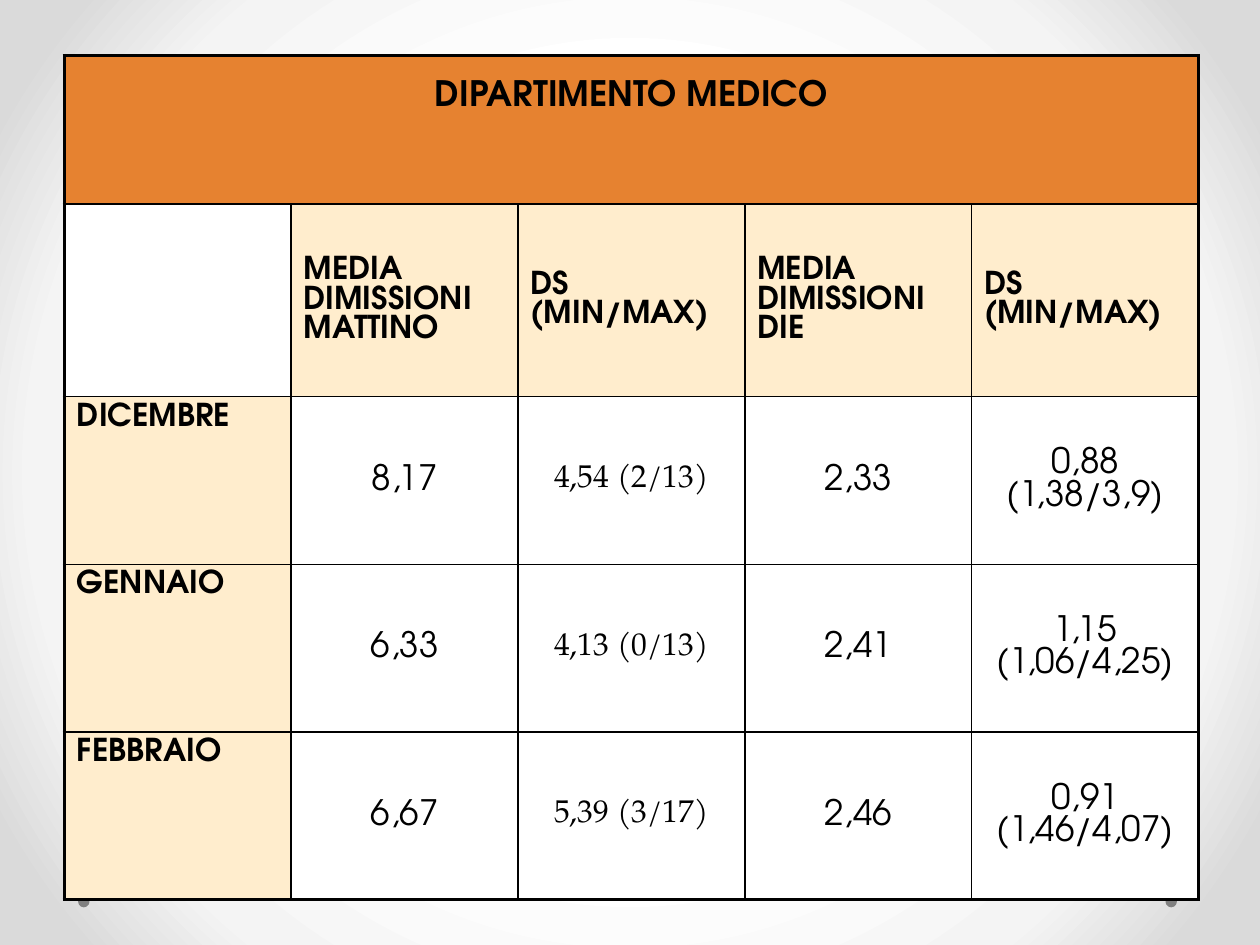
"""Build the slide with the discharge table of the medical department."""
import pptx
import pptx.dml.color
import pptx.enum.shapes
import pptx.enum.text
import pptx.oxml
import pptx.oxml.ns
import pptx.util
from pptx.util import Pt

BLACK = pptx.dml.color.RGBColor(0x00, 0x00, 0x00)
WHITE = pptx.dml.color.RGBColor(0xFF, 0xFF, 0xFF)
GRAY = pptx.dml.color.RGBColor(0x80, 0x80, 0x80)
ORANGE = pptx.dml.color.RGBColor(0xE6, 0x82, 0x30)
CREAM = pptx.dml.color.RGBColor(0xFF, 0xED, 0xCD)
SANS = "TeX Gyre Adventor"
SERIF = "TeX Gyre Pagella"
GRADIENT_STOPS = [(50, "FFFFFF"), (76, "F4F4F4"), (92, "DADADA")]
ROW_HEIGHTS = [85, 110, 95.8, 95.8, 95.8]
COLUMN_WIDTH = 129.6
ROWS = [
    ["DIPARTIMENTO MEDICO", "", "", "", ""],
    ["", "MEDIA DIMISSIONI MATTINO", "DS (MIN/MAX)", "MEDIA DIMISSIONI DIE", "DS (MIN/MAX)"],
    ["DICEMBRE", "8,17", "4,54 (2/13)", "2,33", "0,88 (1,38/3,9)"],
    ["GENNAIO", "6,33", "4,13 (0/13)", "2,41", "1,15 (1,06/4,25)"],
    ["FEBBRAIO", "6,67", "5,39 (3/17)", "2,46", "0,91 (1,46/4,07)"],
]
LAST_ROW = len(ROWS) - 1
LAST_COLUMN = len(ROWS[0]) - 1


def set_borders(cell, outer_sides):
    properties = cell._tc.get_or_add_tcPr()
    for position, side in enumerate("LRTB"):
        width = Pt(2.25 if side in outer_sides else 1)
        properties.insert(position, pptx.oxml.parse_xml(
            f'<a:ln{side} {pptx.oxml.ns.nsdecls("a")} w="{width}">'
            f'<a:solidFill><a:srgbClr val="{BLACK}"/></a:solidFill></a:ln{side}>'))


presentation = pptx.Presentation()
presentation.slide_width = Pt(720)
presentation.slide_height = Pt(540)
slide = presentation.slides.add_slide(presentation.slide_layouts[6])

stops = "".join(f'<a:gs pos="{position * 1000}"><a:srgbClr val="{color}"/></a:gs>'
                for position, color in GRADIENT_STOPS)
slide.element.cSld.insert(0, pptx.oxml.parse_xml(
    f'<p:bg {pptx.oxml.ns.nsdecls("p", "a")}><p:bgPr><a:gradFill><a:gsLst>{stops}</a:gsLst>'
    '<a:path path="circle"><a:fillToRect l="50000" t="50000" r="50000" b="50000"/></a:path>'
    '</a:gradFill><a:effectLst/></p:bgPr></p:bg>'))

for left in (666, 44.64):
    dot = slide.shapes.add_shape(
        pptx.enum.shapes.MSO_SHAPE.OVAL, Pt(left), Pt(512), Pt(6.5), Pt(6.5))
    dot.shadow.inherit = False
    dot.fill.solid()
    dot.fill.fore_color.rgb = GRAY
    dot.line.fill.background()

table = slide.shapes.add_table(
    len(ROWS), len(ROWS[0]), Pt(36.8), Pt(31.7),
    Pt(COLUMN_WIDTH * len(ROWS[0])), Pt(sum(ROW_HEIGHTS))).table
for column in table.columns:
    column.width = Pt(COLUMN_WIDTH)
for row, height in zip(table.rows, ROW_HEIGHTS):
    row.height = Pt(height)
table.cell(0, 0).merge(table.cell(0, LAST_COLUMN))

for row_index, texts in enumerate(ROWS):
    for column_index, text in enumerate(texts):
        cell = table.cell(row_index, column_index)
        is_title = row_index == 0
        is_header = row_index == 1
        is_month = row_index > 1 and column_index == 0
        is_value = row_index > 1 and column_index > 0
        is_serif = is_value and column_index == 2

        cell.fill.solid()
        if is_title:
            cell.fill.fore_color.rgb = ORANGE
        elif text and not is_value:
            cell.fill.fore_color.rgb = CREAM
        else:
            cell.fill.fore_color.rgb = WHITE

        outer_sides = ""
        if column_index == 0:
            outer_sides += "L"
        if column_index == LAST_COLUMN or is_title:
            outer_sides += "R"
        if is_title:
            outer_sides += "T"
        if row_index == LAST_ROW:
            outer_sides += "B"
        set_borders(cell, outer_sides)

        if not text:
            continue
        cell.margin_top = Pt(14.4 if is_title else 3.6)
        if is_header or is_value:
            cell.vertical_anchor = pptx.enum.text.MSO_ANCHOR.MIDDLE
        cell.text_frame.text = text
        paragraph = cell.text_frame.paragraphs[0]
        if is_title or is_value:
            paragraph.alignment = pptx.enum.text.PP_ALIGN.CENTER
        font = paragraph.runs[0].font
        font.name = SERIF if is_serif else SANS
        font.size = Pt(18 if is_header or is_month or is_serif else 20)
        font.bold = not is_value
        font.color.rgb = BLACK

presentation.save("out.pptx")
